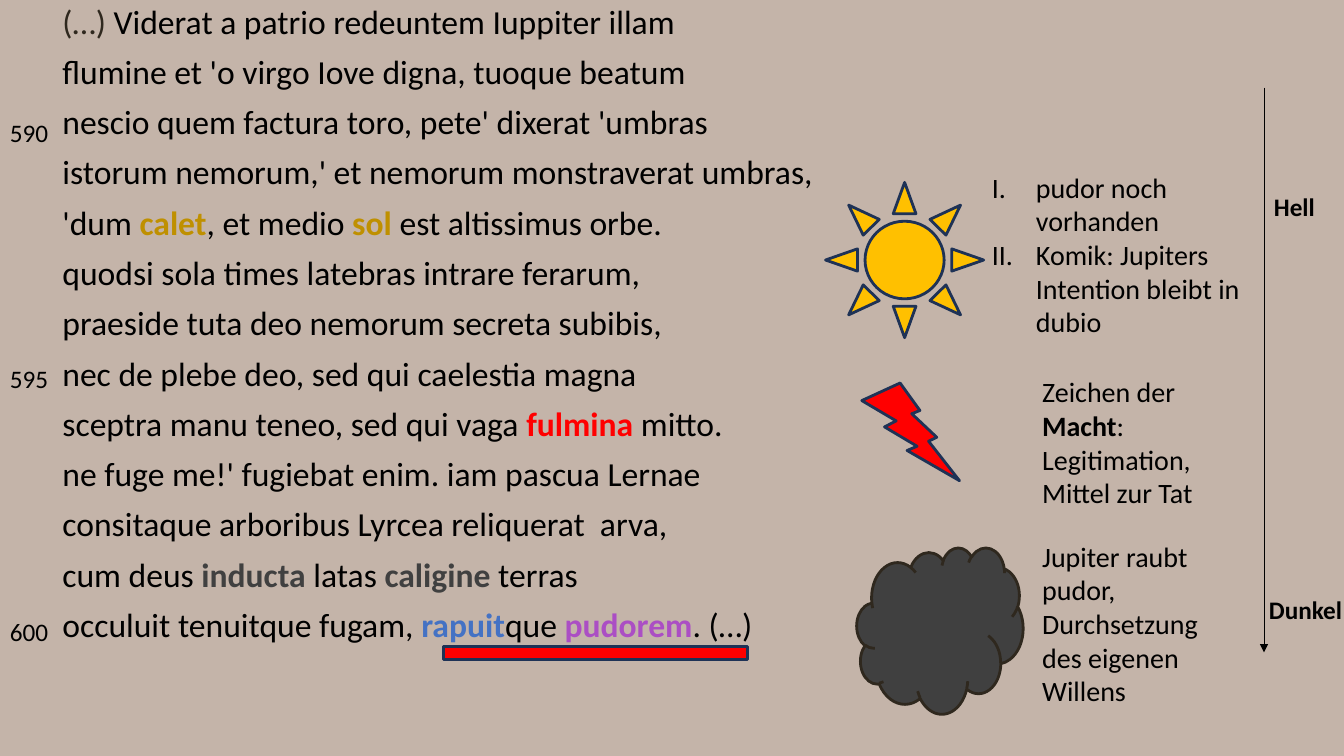
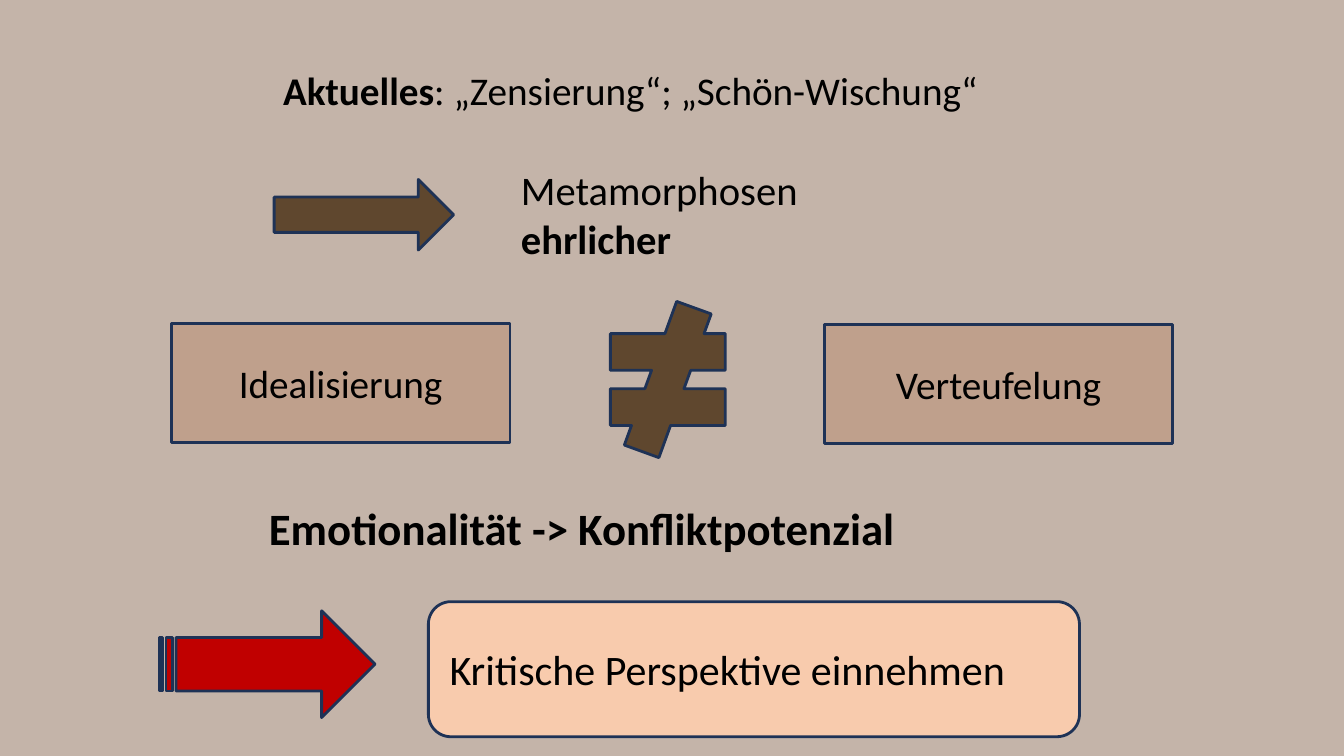
from dataclasses import dataclass
from typing import NamedTuple, Optional

import pptx
import pptx.dml.color
import pptx.enum.shapes
import pptx.enum.text
import pptx.oxml
import pptx.oxml.ns
import pptx.util
from lxml import etree

Pt = pptx.util.Pt
Preset = pptx.enum.shapes.MSO_SHAPE
Align = pptx.enum.text.PP_ALIGN
Anchor = pptx.enum.text.MSO_ANCHOR
qn = pptx.oxml.ns.qn


@dataclass(frozen=True)
class Theme:
    font: str = "Calibri"
    background: str = "C4B4A9"
    text: str = "000000"
    outline: str = "1E3256"
    dark_brown: str = "2F281E"
    brown: str = "5F472E"
    tan: str = "BFA08C"
    peach: str = "F8CBAD"
    sun: str = "FFC000"
    gold: str = "BF9000"
    red: str = "FF0000"
    dark_red: str = "C00000"
    gray: str = "404040"
    blue: str = "4472C4"
    purple: str = "AB4EC4"
    label_size: float = 18
    note_size: float = 20
    verse_size: float = 24
    heading_size: float = 28
    contrast_size: float = 29
    result_size: float = 30
    thesis_size: float = 32
    outline_width: float = 2
    inset: float = 7.2


THEME = Theme()


class Box(NamedTuple):
    left: float
    top: float
    width: float
    height: float


class Span(NamedTuple):
    text: str
    color: Optional[str] = None
    bold: bool = False


@dataclass(frozen=True)
class Figure:
    preset: Preset
    box: Box
    fill: str
    outline: str = THEME.outline
    adjustment: Optional[float] = None
    text: str = ""
    size: float = THEME.heading_size
    align: Align = Align.CENTER
    left_inset: float = THEME.inset


@dataclass(frozen=True)
class Label:
    box: Box
    paragraphs: list
    size: float
    bold: bool = False
    right_inset: float = THEME.inset


# Content: each verse or paragraph is a list of spans
VERSES = [
    [Span("(…) ", THEME.dark_brown), Span("Viderat a patrio redeuntem Iuppiter illam")],
    [Span("flumine et 'o virgo Iove digna, tuoque beatum")],
    [Span("nescio quem factura toro, pete' dixerat 'umbras")],
    [Span("istorum nemorum,' et nemorum monstraverat umbras,")],
    [Span("'dum"), Span(" calet", THEME.gold, True), Span(", et medio "),
     Span("sol", THEME.gold, True), Span(" est altissimus orbe.")],
    [Span("quodsi sola times latebras intrare ferarum,")],
    [Span("praeside tuta deo nemorum secreta subibis,")],
    [Span("nec de plebe deo, sed qui caelestia magna")],
    [Span("sceptra manu teneo, sed qui vaga "), Span("fulmina", THEME.red, True),
     Span(" mitto.")],
    [Span("ne fuge me!' fugiebat enim. iam pascua Lernae")],
    [Span("consitaque arboribus Lyrcea reliquerat  arva,")],
    [Span("cum deus "), Span("inducta", THEME.gray, True), Span(" latas "),
     Span("caligine", THEME.gray, True), Span(" terras")],
    [Span("occuluit tenuitque fugam, "), Span("rapuit", THEME.blue, True), Span("que "),
     Span("pudorem", THEME.purple, True), Span(". (…)")],
]
SUN_NOTES = [
    [Span("pudor noch vorhanden")],
    [Span("Komik: Jupiters Intention bleibt in dubio")],
]
LINE_NUMBERS = {"590": 80, "595": 255.6, "600": 437}
BRIGHTNESS_LABELS = {"Hell": (902.9, 133.2), "Dunkel": (899.3, 421.2)}

VERSE_FIGURES = [
    Figure(Preset.SUN, Box(589.7, 130.3, 113, 110.9), THEME.sun),
    Figure(Preset.CLOUD, Box(612, 391, 118.8, 118.8), THEME.gray, THEME.dark_brown),
    Figure(Preset.LIGHTNING_BOLT, Box(615.6, 273.6, 69.8, 69.8), THEME.red),
    Figure(Preset.MATH_MINUS, Box(277.9, 404.6, 295.2, 123.8), THEME.red,
           adjustment=0.075),
]
VERSE_LABELS = [
    Label(Box(737.3, 264.2, 144, 103),
          [[Span("Zeichen der "), Span("Macht", bold=True), Span(":")],
           [Span("Legitimation, Mittel zur Tat")]], THEME.note_size),
    Label(Box(737.3, 381.6, 154, 127.4),
          [[Span("Jupiter raubt pudor, Durchsetzung des eigenen Willens")]],
          THEME.note_size),
]

TODAY_FIGURES = [
    Figure(Preset.FLOWCHART_ALTERNATE_PROCESS, Box(306, 429.8, 465.1, 96.5), THEME.peach,
           text="Kritische Perspektive einnehmen", size=THEME.result_size,
           align=Align.LEFT, left_inset=10.4),
    Figure(Preset.RECTANGLE, Box(122.4, 231.1, 241.9, 85), THEME.tan, text="Idealisierung"),
    Figure(Preset.RECTANGLE, Box(589, 231.8, 248.4, 85), THEME.tan, text="Verteufelung"),
    Figure(Preset.RIGHT_ARROW, Box(195.8, 128.2, 128.2, 50.4), THEME.brown),
    Figure(Preset.MATH_NOT_EQUAL, Box(421.2, 215.3, 111.6, 111.6), THEME.brown),
    Figure(Preset.STRIPED_RIGHT_ARROW, Box(113.8, 436.3, 154.1, 76.3), THEME.dark_red),
]
TODAY_LABELS = [
    Label(Box(365, 114.5, 297.4, 76.3),
          [[Span("Metamorphosen "), Span("ehrlicher", bold=True)]], THEME.contrast_size),
    Label(Box(185, 354.2, 651.6, 45.4),
          [[Span("Emotionalität -> Konfliktpotenzial")]], THEME.thesis_size, bold=True),
]


def color(value: str) -> pptx.dml.color.RGBColor:
    return pptx.dml.color.RGBColor.from_string(value)


def write_text(frame, paragraphs: list, *, size: float, bold: bool = False,
               align: Align = Align.LEFT, anchor: Anchor = Anchor.TOP,
               line_spacing: float = 1.0, gap: float = 0, numbering: str = "",
               indent: float = 0, left_inset: float = THEME.inset,
               right_inset: float = THEME.inset) -> None:
    """Fill a text frame with paragraphs of spans in one shared format."""
    frame.word_wrap = True
    frame.auto_size = pptx.enum.text.MSO_AUTO_SIZE.NONE
    frame.vertical_anchor = anchor
    frame.margin_left, frame.margin_right = Pt(left_inset), Pt(right_inset)
    frame.margin_top = frame.margin_bottom = Pt(THEME.inset / 2)
    for index, spans in enumerate(paragraphs):
        paragraph = frame.add_paragraph() if index else frame.paragraphs[0]
        properties = paragraph._p.get_or_add_pPr()
        properties.set("marL", str(int(Pt(indent))))
        properties.set("indent", str(-int(Pt(indent))))
        if numbering:
            etree.SubElement(properties, qn("a:buFont"), typeface="+mj-lt")
            etree.SubElement(properties, qn("a:buAutoNum"), type=numbering)
        else:
            etree.SubElement(properties, qn("a:buNone"))
        paragraph.alignment = align
        paragraph.line_spacing = line_spacing
        paragraph.space_before = Pt(gap if index else 0)
        paragraph.space_after = Pt(0)
        for span in spans:
            run = paragraph.add_run()
            run.text = span.text
            run.font.name = THEME.font
            run.font.size = Pt(size)
            run.font.bold = bold or span.bold
            run.font.color.rgb = color(span.color or THEME.text)


def place(shape, box: Box) -> None:
    shape.left, shape.top, shape.width, shape.height = map(Pt, box)


def draw_label(slide, label: Label) -> None:
    shape = slide.shapes.add_textbox(*map(Pt, label.box))
    write_text(shape.text_frame, label.paragraphs, size=label.size, bold=label.bold,
               right_inset=label.right_inset)


def draw_figure(slide, figure: Figure) -> None:
    shape = slide.shapes.add_shape(figure.preset, *map(Pt, figure.box))
    shape.shadow.inherit = False
    shape.fill.solid()
    shape.fill.fore_color.rgb = color(figure.fill)
    shape.line.color.rgb = color(figure.outline)
    shape.line.width = Pt(THEME.outline_width)
    if figure.adjustment is not None:
        shape.adjustments[0] = figure.adjustment
    if figure.text:
        write_text(shape.text_frame, [[Span(figure.text)]], size=figure.size,
                   align=figure.align, anchor=Anchor.MIDDLE, left_inset=figure.left_inset)


def draw_arrow(slide, left: float, top: float, bottom: float) -> None:
    arrow = slide.shapes.add_connector(pptx.enum.shapes.MSO_CONNECTOR.STRAIGHT,
                                       Pt(left), Pt(top), Pt(left), Pt(bottom))
    arrow.line.color.rgb = color(THEME.text)
    arrow.line.width = Pt(0.75)
    properties = arrow._element.spPr
    etree.SubElement(properties.find(qn("a:ln")), qn("a:tailEnd"), type="triangle")
    etree.SubElement(properties, qn("a:effectLst"))


def build_verse_slide(presentation) -> None:
    slide = presentation.slides.add_slide(presentation.slide_layouts.get_by_name("Two Content"))
    title, verses, sun_notes = slide.placeholders
    title._element.getparent().remove(title._element)

    # Poem with its line numbers
    place(verses, Box(37.4, 0, 560, 475))
    write_text(verses.text_frame, VERSES, size=THEME.verse_size, line_spacing=0.9, gap=10)
    for number, top in LINE_NUMBERS.items():
        draw_label(slide, Label(Box(0, top, 50, 29), [[Span(number)]], THEME.label_size))

    # Symbols and their interpretation
    place(sun_notes, Box(701.3, 118, 193.7, 127.4))
    write_text(sun_notes.text_frame, SUN_NOTES, size=THEME.note_size,
               numbering="romanUcPeriod", indent=31.5)
    for figure in VERSE_FIGURES:
        draw_figure(slide, figure)
    for label in VERSE_LABELS:
        draw_label(slide, label)

    # Scale from light to dark
    draw_arrow(slide, 902.9, 62.6, 466)
    for word, (left, top) in BRIGHTNESS_LABELS.items():
        draw_label(slide, Label(Box(left, top, 960 - left, 29), [[Span(word)]],
                                THEME.label_size, bold=True, right_inset=0))


def build_today_slide(presentation) -> None:
    slide = presentation.slides.add_slide(presentation.slide_layouts.get_by_name("Title Only"))
    title = slide.shapes.title
    place(title, Box(195, 44, 643.7, 40.3))
    write_text(title.text_frame,
               [[Span("Aktuelles", bold=True), Span(": „Zensierung“; „Schön-Wischung“")]],
               size=THEME.heading_size)
    for figure in TODAY_FIGURES:
        draw_figure(slide, figure)
    for label in TODAY_LABELS:
        draw_label(slide, label)


def main() -> None:
    presentation = pptx.Presentation()
    presentation.slide_width, presentation.slide_height = Pt(960), Pt(540)
    background = presentation.slide_master.background.fill
    background.solid()
    background.fore_color.rgb = color(THEME.background)
    build_verse_slide(presentation)
    build_today_slide(presentation)
    presentation.save("out.pptx")


if __name__ == "__main__":
    main()
